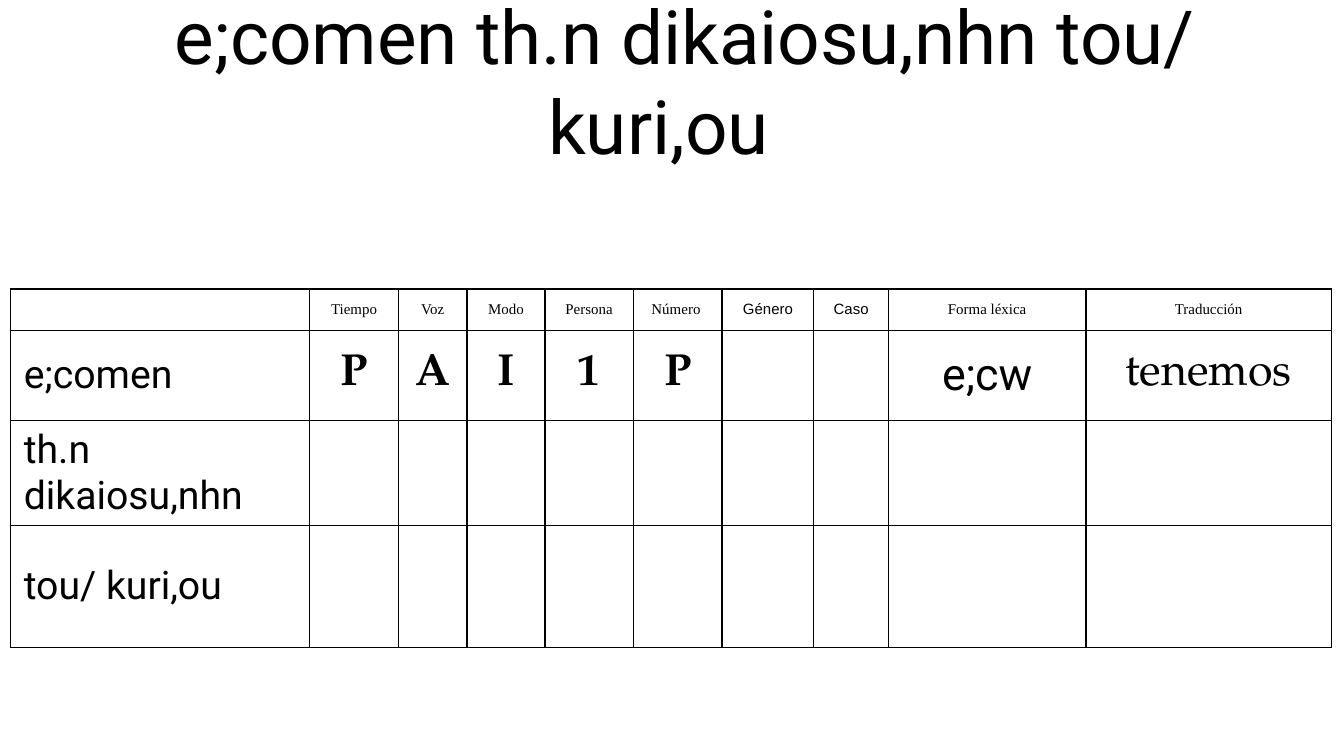
from lxml import etree
from pptx import Presentation
from pptx.dml.color import RGBColor
from pptx.enum.text import MSO_ANCHOR, PP_ALIGN
from pptx.oxml.ns import qn
from pptx.util import Cm, Pt

MIDDLE = MSO_ANCHOR.MIDDLE
LEFT = PP_ALIGN.LEFT
CENTER = PP_ALIGN.CENTER

COLORS = {"text": "000000", "border": "000000", "background": "FFFFFF"}
SANS, SERIF, BOOK, GREEK = "Arial", "Times New Roman", "TeX Gyre Pagella", "Roboto"

TITLE = "e;comen th.n dikaiosu,nhn tou/ kuri,ou"
HEADERS = ["", "Tiempo", "Voz", "Modo", "Persona", "Número ", "Género", "Caso",
           "Forma léxica", "Traducción"]
ROWS = [
    HEADERS,
    ["e;comen", "P", "A", "I", "1", "P", "", "", "e;cw", "tenemos"],
    ["th.n dikaiosu,nhn"] + [""] * 9,
    ["tou/ kuri,ou"] + [""] * 9,
]
COLUMN_WIDTHS = [5.66, 1.68, 1.3, 1.47, 1.68, 1.68, 1.73, 1.42, 3.73, 4.65]
ROW_HEIGHTS = [0.79, 1.7, 1.98, 2.31]
SANS_HEADERS = ("Género", "Caso")
LEXICAL_COLUMN = HEADERS.index("Forma léxica")


def style_paragraph(paragraph, font_name, size, bold=False, alignment=CENTER):
    """Align a paragraph and format its runs."""
    paragraph.alignment = alignment
    for run in paragraph.runs:
        run.font.name = font_name
        run.font.size = Pt(size)
        run.font.bold = bold
        run.font.color.rgb = RGBColor.from_string(COLORS["text"])


def cell_style(row, column):
    """Return font name, size, boldness and alignment for a table position."""
    if row == 0:
        return SANS if HEADERS[column] in SANS_HEADERS else SERIF, 8, False, CENTER
    if column == 0:
        return GREEK, 21, False, LEFT
    if column == LEXICAL_COLUMN:
        return GREEK, 24, False, CENTER
    return BOOK, 24, column < LEXICAL_COLUMN, CENTER


def add_borders(cell, top_width):
    """Draw the four borders of a cell."""
    properties = cell._tc.get_or_add_tcPr()
    for side, width in (("L", 1), ("R", 1), ("T", top_width), ("B", 0.75)):
        line = etree.SubElement(properties, qn(f"a:ln{side}"), w=str(Pt(width)))
        fill = etree.SubElement(line, qn("a:solidFill"))
        etree.SubElement(fill, qn("a:srgbClr"), val=COLORS["border"])


def fill_cell(cell, text, row, column):
    """Write and format one table cell."""
    cell.margin_left = cell.margin_right = Cm(0.25)
    cell.margin_top = cell.margin_bottom = Cm(0.1)
    cell.vertical_anchor = MIDDLE
    add_borders(cell, 1 if row == 0 else 0.75)
    cell.fill.solid()
    cell.fill.fore_color.rgb = RGBColor.from_string(COLORS["background"])
    paragraph = cell.text_frame.paragraphs[0]
    if text:
        paragraph.text = text
        style_paragraph(paragraph, *cell_style(row, column))
    else:
        etree.SubElement(paragraph._p, qn("a:endParaRPr"), sz="800")


def add_title(slide, left, top, width, height):
    """Place the Greek phrase with an indented first line."""
    shape = slide.shapes.add_textbox(Cm(left), Cm(top), Cm(width), Cm(height))
    text_frame = shape.text_frame
    text_frame.word_wrap = True
    text_frame.vertical_anchor = MIDDLE
    text_frame.text = TITLE
    paragraph = text_frame.paragraphs[0]
    style_paragraph(paragraph, GREEK, 40)
    properties = paragraph._p.get_or_add_pPr()
    properties.set("marL", "0")
    properties.set("indent", str(Cm(1.0)))


def add_parsing_table(slide, left, top, width, height):
    """Place the table that parses each word of the phrase."""
    table = slide.shapes.add_table(len(ROWS), len(HEADERS), Cm(left), Cm(top),
                                   Cm(width), Cm(height)).table
    table.first_row = False
    table.horz_banding = False
    for column, share in zip(table.columns, COLUMN_WIDTHS):
        column.width = Cm(width * share / sum(COLUMN_WIDTHS))
    for row, share in zip(table.rows, ROW_HEIGHTS):
        row.height = Cm(height * share / sum(ROW_HEIGHTS))
    for row, texts in enumerate(ROWS):
        for column, text in enumerate(texts):
            fill_cell(table.cell(row, column), text, row, column)


def main():
    """Build and save the presentation."""
    presentation = Presentation()
    presentation.slide_width = Cm(25.4)
    presentation.slide_height = Cm(14.29)
    slide = presentation.slides.add_slide(presentation.slide_layouts[6])
    add_parsing_table(slide, 0.2, 5.46, 24.97, 6.78)
    add_title(slide, 2.03, 0.53, 20.83, 1.96)
    presentation.save("out.pptx")


if __name__ == "__main__":
    main()
